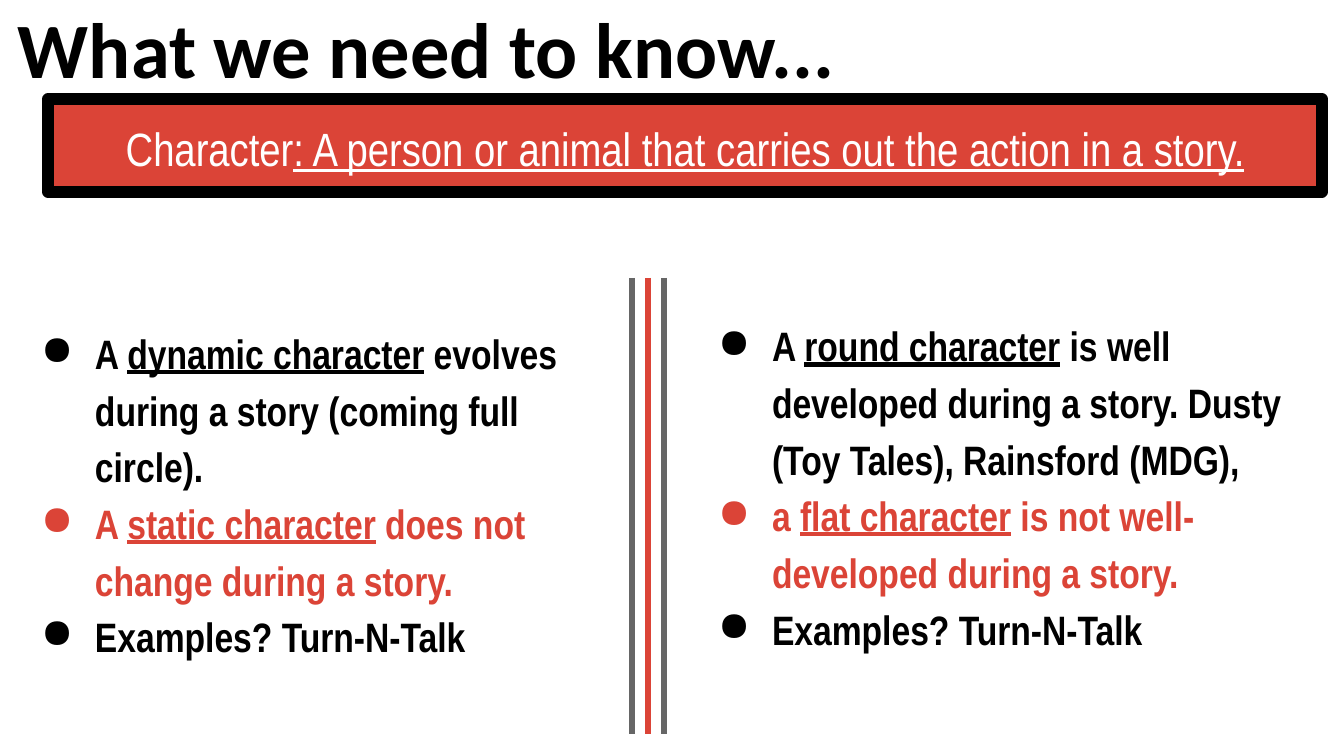
from lxml import etree
from pptx import Presentation
from pptx.dml.color import RGBColor
from pptx.enum.shapes import MSO_CONNECTOR, MSO_SHAPE
from pptx.enum.text import MSO_ANCHOR, PP_ALIGN
from pptx.oxml.ns import qn
from pptx.util import Pt

EMU_PER_PX = 914400 / 134.4
RECTANGLE = MSO_SHAPE.RECTANGLE
STRAIGHT = MSO_CONNECTOR.STRAIGHT
TOP, MIDDLE = MSO_ANCHOR.TOP, MSO_ANCHOR.MIDDLE
LEFT, CENTER = PP_ALIGN.LEFT, PP_ALIGN.CENTER
COLORS = {"black": "000000", "white": "FFFFFF", "red": "DB4437", "gray": "666666"}
INSET = 13
BODY_FONT = "Arial Narrow"


def px(length):
    """Turn px into EMU."""
    return round(length * EMU_PER_PX)


def rgb(name):
    """Look up a named colour."""
    return RGBColor.from_string(COLORS[name])


def set_frame(frame, anchor):
    """Set wrapping, anchor and equal insets of a text frame."""
    frame.word_wrap = True
    frame.vertical_anchor = anchor
    frame.margin_left = frame.margin_right = px(INSET)
    frame.margin_top = frame.margin_bottom = px(INSET)


def add_text(para, text, size, color, font=BODY_FONT, bold=False, underline=False):
    """Add one formatted span to a paragraph."""
    span = para.add_run()
    span.text = text
    span.font.size = Pt(size)
    span.font.name = font
    span.font.bold = bold
    span.font.underline = underline
    span.font.color.rgb = rgb(color)


def add_term(para, parts, **style):
    """Add spans of which the second, the defined term, is underlined."""
    for index, part in enumerate(parts):
        add_text(para, part, underline=index == 1, **style)


def set_bullet(para, color):
    """Give a paragraph a hanging round bullet."""
    props = para._p.get_or_add_pPr()
    props.set("marL", str(px(67)))
    props.set("indent", str(px(-54)))
    fill = etree.SubElement(props, qn("a:buClr"))
    etree.SubElement(fill, qn("a:srgbClr"), val=COLORS[color])
    etree.SubElement(props, qn("a:buChar"), char="●")


def add_title(page, text):
    """Add the slide heading."""
    box = page.shapes.add_textbox(px(5), px(-13), px(1253), px(93))
    set_frame(box.text_frame, TOP)
    add_text(box.text_frame.paragraphs[0], text, size=42, color="black",
             font="Calibri", bold=True)


def add_banner(page, parts):
    """Add the framed definition."""
    box = page.shapes.add_shape(RECTANGLE, px(48), px(99), px(1274), px(93))
    box.shadow.inherit = False
    box.fill.solid()
    box.fill.fore_color.rgb = rgb("red")
    box.line.color.rgb = rgb("black")
    box.line.width = Pt(6)
    etree.SubElement(box.line._get_or_add_ln(), qn("a:round"))
    set_frame(box.text_frame, TOP)
    para = box.text_frame.paragraphs[0]
    para.alignment = CENTER
    para.line_spacing = 1.15
    add_term(para, parts, size=25, color="white")


def add_bullets(page, left, top, width, height, items):
    """Add a column of bulleted paragraphs."""
    box = page.shapes.add_textbox(px(left), px(top), px(width), px(height))
    frame = box.text_frame
    set_frame(frame, MIDDLE)
    for index, (color, parts) in enumerate(items):
        para = frame.add_paragraph() if index else frame.paragraphs[0]
        para.alignment = LEFT
        para.line_spacing = 1.15
        set_bullet(para, color)
        add_term(para, parts, size=22, color=color, bold=True)


def add_divider(page, x, color):
    """Add one vertical rule between the columns."""
    rule = page.shapes.add_connector(STRAIGHT, px(x), px(278), px(x), px(734))
    rule.line.color.rgb = rgb(color)
    rule.line.width = Pt(3)
    etree.SubElement(rule._element.spPr, qn("a:effectLst"))


def main():
    """Build and save the slide."""
    deck = Presentation()
    deck.slide_width, deck.slide_height = px(1344), px(756)
    page = deck.slides.add_slide(deck.slide_layouts[6])
    add_title(page, "What we need to know...")
    add_banner(page, ["Character",
                      ": A person or animal that carries out the action in a story."])
    examples = ("black", ["Examples? Turn-N-Talk"])
    add_bullets(page, 15, 261, 598, 460, [
        ("black", ["A ", "dynamic character",
                   " evolves during a story (coming full circle)."]),
        ("red", ["A ", "static character", " does not change during a story."]),
        examples,
    ])
    add_bullets(page, 692, 223, 637, 521, [
        ("black", ["A ", "round character", " is well developed during a story. "
                   "Dusty (Toy Tales), Rainsford (MDG),"]),
        ("red", ["a ", "flat character", " is not well-developed during a story."]),
        examples,
    ])
    for index, color in enumerate(("gray", "red", "gray")):
        add_divider(page, 632 + 16 * index, color)
    deck.save("out.pptx")


if __name__ == "__main__":
    main()
